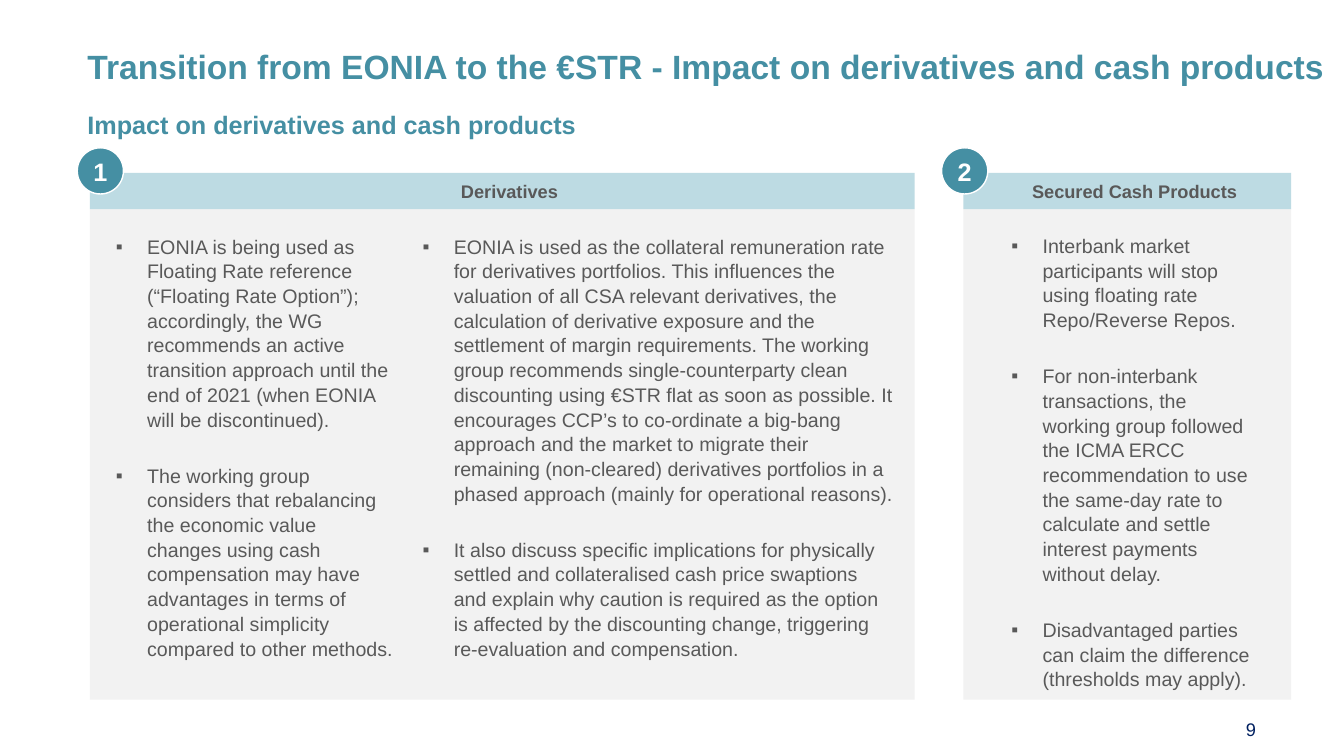
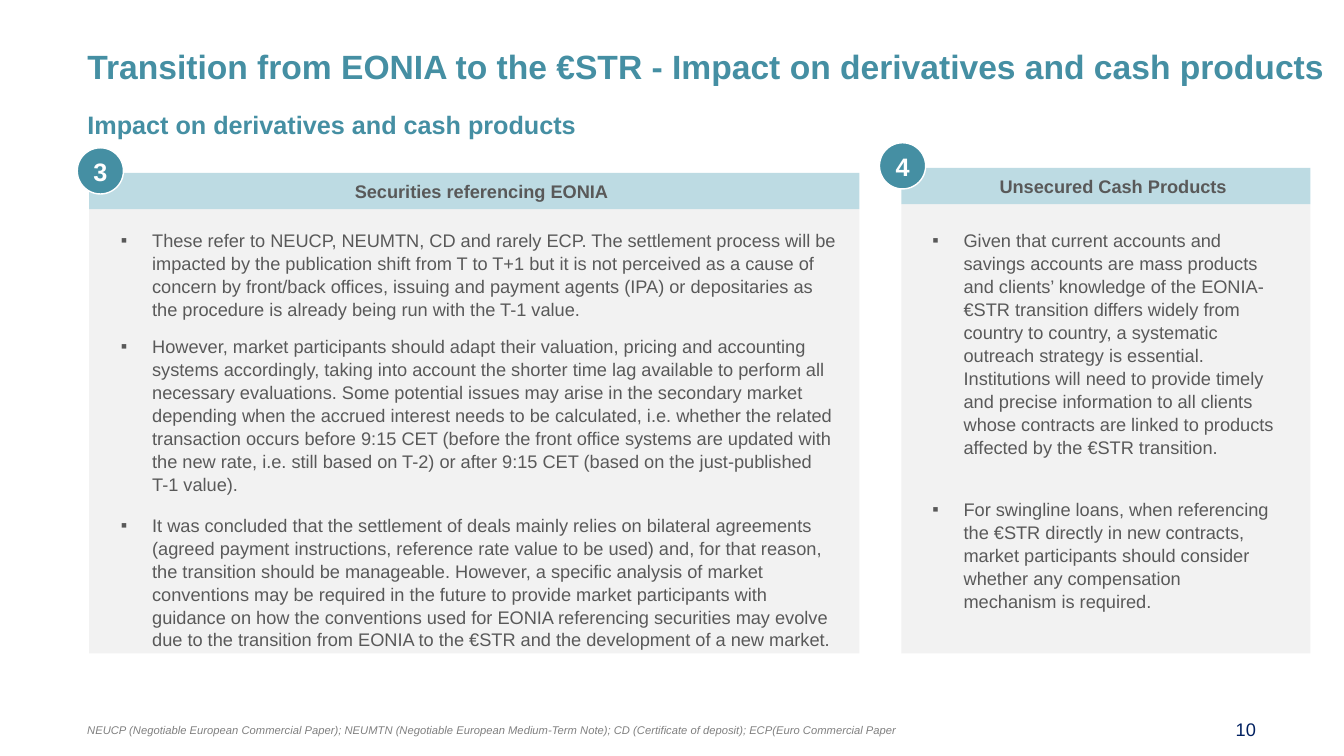
import pptx
import pptx.util
import pptx.dml.color
import pptx.enum.shapes
import pptx.enum.text
import lxml.etree
from pptx.oxml.ns import qn

Pt = pptx.util.Pt
RGB = pptx.dml.color.RGBColor
Shape = pptx.enum.shapes.MSO_SHAPE
Align = pptx.enum.text.PP_ALIGN
Anchor = pptx.enum.text.MSO_ANCHOR

TEAL = RGB(0x45, 0x8F, 0xA3)
PALE = RGB(0xBD, 0xDB, 0xE3)
LIGHT = RGB(0xF2, 0xF2, 0xF2)
DARK = RGB(0x59, 0x59, 0x59)
GREY = RGB(0x80, 0x80, 0x80)
NAVY = RGB(0x00, 0x20, 0x60)
WHITE = RGB(0xFF, 0xFF, 0xFF)

FONT = "Arial"
WIDE, HIGH = pptx.util.Inches(13.33), pptx.util.Inches(7.5)
COL, ROW = WIDE / 160, HIGH / 90
EDGE = 9.2
BAND = 4.3
BADGE = 5.5
HANG = pptx.util.Inches(0.31)

TITLE = "Transition from EONIA to the €STR - Impact on derivatives and cash products"
SUBTITLE = "Impact on derivatives and cash products"

FLOATING = [
    "EONIA is being used as Floating Rate reference (“Floating Rate Option”); accordingly, the WG recommends an active transition approach until the end of 2021 (when EONIA will be discontinued).",
    "The working group considers that rebalancing the economic value changes using cash compensation may have advantages in terms of operational simplicity compared to other methods.",
]
COLLATERAL = [
    "EONIA is used as the collateral remuneration rate for derivatives portfolios. This influences the valuation of all CSA relevant derivatives, the calculation of derivative exposure and the settlement of margin requirements. The working group recommends single-counterparty clean discounting using €STR flat as soon as possible. It encourages CCP’s to co-ordinate a big-bang approach and the market to migrate their remaining (non-cleared) derivatives portfolios in a phased approach (mainly for operational reasons).",
    "It also discuss specific implications for physically settled and collateralised cash price swaptions and explain why caution is required as the option is affected by the discounting change, triggering re-evaluation and compensation.",
]
SECURED = [
    "Interbank market participants will stop using floating rate Repo/Reverse Repos.",
    "For non-interbank transactions, the working group followed the ICMA ERCC recommendation to use the same-day rate to calculate and settle interest payments without delay.",
    "Disadvantaged parties can claim the difference (thresholds may apply).",
]
PAPERS = [
    "These refer to NEUCP, NEUMTN, CD and rarely ECP. The settlement process will be impacted by the publication shift from T to T+1 but it is not perceived as a cause of concern by front/back offices, issuing and payment agents (IPA) or depositaries as the procedure is already being run with the T-1 value.",
    "However, market participants should adapt their valuation, pricing and accounting systems accordingly, taking into account the shorter time lag available to perform all necessary evaluations. Some potential issues may arise in the secondary market depending when the accrued interest needs to be calculated, i.e. whether the related transaction occurs before 9:15 CET (before the front office systems are updated with the new rate, i.e. still based on T-2) or after 9:15 CET (based on the just-published T-1 value).",
    "It was concluded that the settlement of deals mainly relies on bilateral agreements (agreed payment instructions, reference rate value to be used) and, for that reason, the transition should be manageable. However, a specific analysis of market conventions may be required in the future to provide market participants with guidance on how the conventions used for EONIA referencing securities may evolve due to the transition from EONIA to the €STR and the development of a new market.",
]
UNSECURED = [
    "Given that current accounts and savings accounts are mass products and clients’ knowledge of the EONIA-€STR transition differs widely from country to country, a systematic outreach strategy is essential. Institutions will need to provide timely and precise information to all clients whose contracts are linked to products affected by the €STR transition.",
    "For swingline loans, when referencing the €STR directly in new contracts, market participants should consider whether any compensation mechanism is required.",
]
NOTE = "NEUCP (Negotiable European Commercial Paper); NEUMTN (Negotiable European Medium-Term Note); CD (Certificate of deposit); ECP(Euro Commercial Paper"


def grid(x, y, w, h):
    """Turn columns and rows into slide lengths."""
    return int(x * COL), int(y * ROW), int(w * COL), int(h * ROW)


def place(shape, x, y, w, h):
    shape.left, shape.top, shape.width, shape.height = grid(x, y, w, h)


def mark(para):
    """Give a paragraph a square bullet with a hanging indent."""
    props = para._p.get_or_add_pPr()
    props.set("marL", str(HANG))
    props.set("indent", str(-HANG))
    tint = lxml.etree.SubElement(props, qn("a:buClr"))
    lxml.etree.SubElement(tint, qn("a:srgbClr"), val=str(DARK))
    lxml.etree.SubElement(props, qn("a:buFont"), typeface=FONT)
    lxml.etree.SubElement(props, qn("a:buChar"), char="▪")


def write(shape, *texts, size, color, bold=False, italic=False,
          align=Align.LEFT, anchor=Anchor.TOP, gaps=(), bullet=False):
    """Fill a shape with paragraphs; gaps are the points between them."""
    frame = shape.text_frame
    frame.word_wrap = True
    frame.auto_size = pptx.enum.text.MSO_AUTO_SIZE.NONE
    frame.vertical_anchor = anchor
    for i, text in enumerate(texts):
        para = frame.add_paragraph() if i else frame.paragraphs[0]
        if bullet:
            mark(para)
        para.alignment = align
        para.line_spacing = 1.05
        para.space_before = Pt(gaps[i - 1] if i else 0)
        para.space_after = Pt(0)
        run = para.add_run()
        run.text = text
        font = run.font
        font.name, font.size = FONT, Pt(size)
        font.bold, font.italic = bold, italic
        font.color.rgb = color


def draw(slide, kind, area, fill):
    shape = slide.shapes.add_shape(kind, *grid(*area))
    shape.shadow.inherit = False
    shape.fill.solid()
    shape.fill.fore_color.rgb = fill
    shape.line.fill.background()
    return shape


def panel(slide, number, head, x, top, w, end, spot):
    """Draw a headed panel behind the lists, with a badge at column spot."""
    body = draw(slide, Shape.RECTANGLE, (x, top + BAND, w, end - top - BAND), LIGHT)
    band = draw(slide, Shape.RECTANGLE, (x, top, w, BAND), PALE)
    band.text_frame.margin_left = pptx.util.Inches(0.24)
    write(band, head, size=13, color=DARK, bold=True,
          align=Align.CENTER, anchor=Anchor.MIDDLE)
    for part in (band, body):
        slide.shapes.element.insert(2, part.element)
    badge = draw(slide, Shape.OVAL, (spot, top - 3, BADGE, BADGE), TEAL)
    badge.line.color.rgb = WHITE
    badge.line.width = Pt(1)
    frame = badge.text_frame
    frame.margin_left = frame.margin_right = 0
    frame.margin_top = frame.margin_bottom = 0
    write(badge, str(number), size=18, color=WHITE, bold=True,
          align=Align.CENTER, anchor=Anchor.MIDDLE)


def label(slide, text, area, **look):
    write(slide.shapes.add_textbox(*grid(*area)), text, **look)


def build(deck, page, panels, lists, size):
    """Add a slide with the shared title, subtitle and page number."""
    slide = deck.slides.add_slide(deck.slide_layouts.get_by_name("Comparison"))
    title, sub, *slots = slide.placeholders
    place(title, EDGE, 4.6, 150.8, 6)
    write(title, TITLE, size=24, color=TEAL, bold=True)
    place(sub, EDGE, 12.2, 60.6, 4.8)
    write(sub, SUBTITLE, size=18, color=TEAL, bold=True)
    for slot, (area, texts, gaps) in zip(slots, lists):
        place(slot, *area)
        write(slot, *texts, size=size, color=DARK, gaps=gaps, bullet=True)
    for slot in slots[len(lists):]:
        slot.element.getparent().remove(slot.element)
    for item in panels:
        panel(slide, *item)
    label(slide, str(page), (114.7, 84.4, 36, 4.8), size=13, color=NAVY,
          align=Align.RIGHT, anchor=Anchor.MIDDLE)
    return slide


def main():
    deck = pptx.Presentation()
    deck.slide_width, deck.slide_height = WIDE, HIGH
    build(deck, 9, [
        (1, "Derivatives", 10.7, 20.6, 98.2, 83.3, EDGE),
        (2, "Secured Cash Products", 114.7, 20.6, 39, 83.3, 112.1),
    ], [
        ((12.6, 27.2, 35.5, 50.3), FLOATING, [22.5]),
        ((49.1, 27.2, 58.6, 50.3), COLLATERAL, [22.5]),
        ((119.2, 27.1, 31.6, 54.1), SECURED, [22.5, 22.5]),
    ], 14)
    last = build(deck, 10, [
        (3, "Securities referencing EONIA", 10.6, 20.6, 91.7, 77.8, EDGE),
        (4, "Unsecured Cash Products", 107.3, 20, 48.7, 77.8, 104.7),
    ], [
        ((13.2, 26.6, 87.5, 49.6), PAPERS, [10, 13]),
        ((109.8, 26.6, 43.2, 47.9), UNSECURED, [28]),
    ], 13)
    label(last, NOTE, (EDGE, 85.4, 130.4, 2.9), size=8, color=GREY, italic=True)
    deck.save("out.pptx")


if __name__ == "__main__":
    main()
